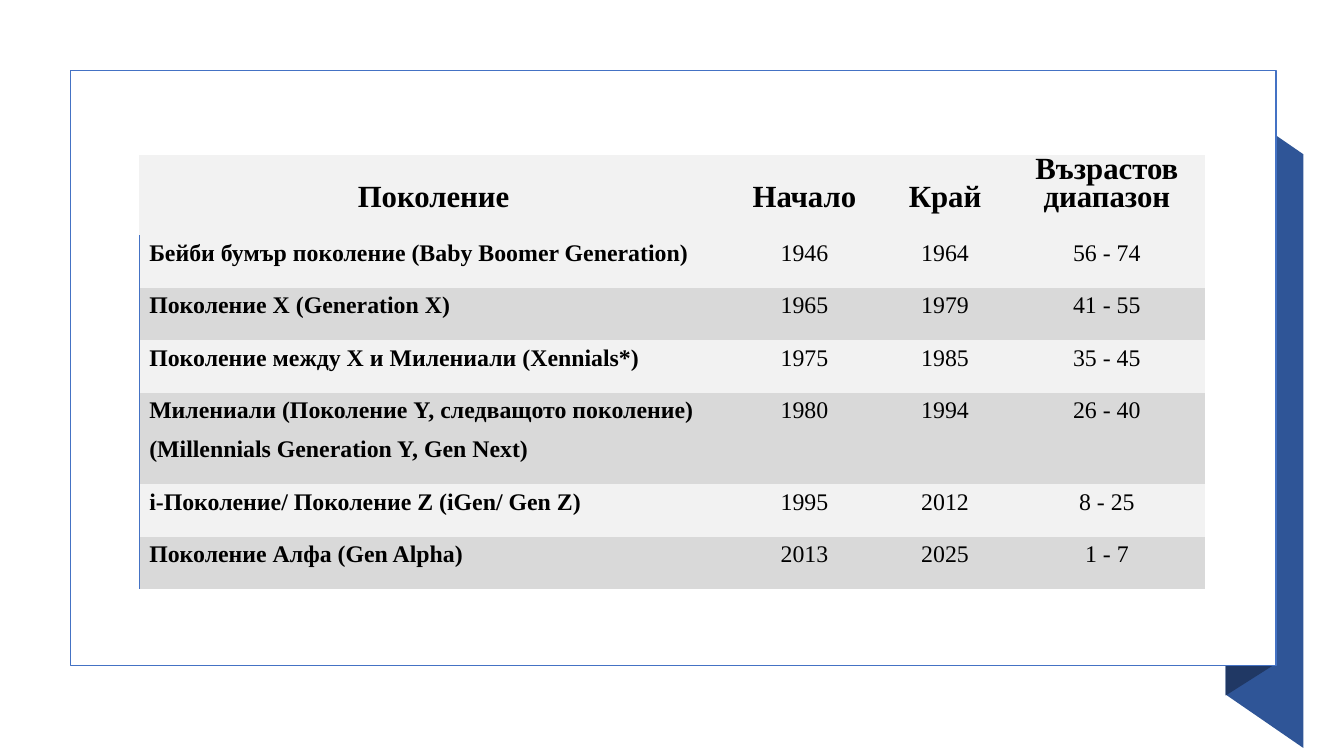
import dataclasses

import pptx
import pptx.dml.color
import pptx.enum.shapes
import pptx.enum.text
import pptx.oxml.ns
import pptx.util
from lxml import etree

Pt = pptx.util.Pt
ALIGN = pptx.enum.text.PP_ALIGN
ANCHOR = pptx.enum.text.MSO_ANCHOR


@dataclasses.dataclass(frozen=True)
class Theme:
    font: str = "Times New Roman"
    header_size: int = 22
    body_size: int = 17
    text: str = "000000"
    card: str = "FFFFFF"
    accent: str = "4472C4"
    ribbon: str = "2F5597"
    fold: str = "203864"
    light_row: str = "F2F2F2"
    dark_row: str = "D9D9D9"


THEME = Theme()
SLIDE_SIZE = (960, 540)
CARD_BOX = (50.4, 50.4, 861.1, 424.8)
TABLE_OFFSET = (49, 60.5)
COLUMN_WIDTHS = (417.6, 112.3, 88.6, 142.6)
HEADER_HEIGHT, ROW_HEIGHT, TALL_ROW_HEIGHT = 56.2, 37.5, 61.2

HEADERS = ("Поколение", "Начало", "Край", "Възрастов диапазон")
GENERATIONS = (
    ("Бейби бумър поколение (Baby Boomer Generation)", "1946", "1964", "56 - 74"),
    ("Поколение Х (Generation X)", "1965", "1979", "41 - 55"),
    ("Поколение между Х и Милениали (Xennials*)", "1975", "1985", "35 - 45"),
    ("Милениали (Поколение Y, следващото поколение)\n"
     "(Millennials Generation Y, Gen Next)", "1980", "1994", "26 - 40"),
    ("i-Поколение/ Поколение Z (iGen/ Gen Z)", "1995", "2012", "8 - 25"),
    ("Поколение Алфа (Gen Alpha)", "2013", "2025", "1 - 7"),
)


def color(value):
    return pptx.dml.color.RGBColor.from_string(value)


def paint(shape, fill, line=None):
    shape.shadow.inherit = False
    shape.fill.solid()
    shape.fill.fore_color.rgb = color(fill)
    if line:
        shape.line.color.rgb = color(line)
        shape.line.width = Pt(1)
    else:
        shape.line.fill.background()


def write_text(text_frame, text, *, size, bold=False, align=ALIGN.CENTER):
    """Write one paragraph for each line of the text."""
    text_frame.text = text
    for paragraph in text_frame.paragraphs:
        paragraph.alignment = align
        paragraph.line_spacing = Pt(20)
        paragraph.space_after = Pt(8)
        font = paragraph.runs[0].font
        font.name = THEME.font
        font.size = Pt(size)
        font.bold = bold
        font.color.rgb = color(THEME.text)


def set_borders(cell, left=None):
    """Clear the borders of a cell, except for a left one of the given colour."""
    properties = cell._tc.get_or_add_tcPr()
    qualified = pptx.oxml.ns.qn
    for side in ("lnL", "lnR", "lnT", "lnB"):
        border = etree.SubElement(properties, qualified(f"a:{side}"))
        if side == "lnL" and left:
            border.set("w", str(Pt(1)))
            fill = etree.SubElement(border, qualified("a:solidFill"))
            etree.SubElement(fill, qualified("a:srgbClr"), val=left)
        else:
            border.set("w", "0")
            etree.SubElement(border, qualified("a:noFill"))


def format_cell(cell, fill, anchor, left_border=None):
    set_borders(cell, left_border)
    cell.fill.solid()
    cell.fill.fore_color.rgb = color(fill)
    cell.vertical_anchor = anchor
    cell.margin_left, cell.margin_right = Pt(7.2), Pt(4.3)
    cell.margin_top, cell.margin_bottom = Pt(2.2), Pt(15.1)


def add_band(slide, left, top, width, height, slant, fill):
    """Add an upright band whose right side is lower than its left by slant."""
    right, bottom = left + width, top + height
    corners = [(left, top), (right, top + slant),
               (right, bottom + slant), (left, bottom)]
    points = [(Pt(x), Pt(y)) for x, y in corners]
    builder = slide.shapes.build_freeform(*points[0])
    builder.add_line_segments(points[1:], close=True)
    paint(builder.convert_to_shape(), fill)


def add_card(slide, left, top, width, height):
    """Add the framed card with the ribbon folded behind its right edge."""
    ribbon_left = left + width - 36
    ribbon_top = top + 21.6
    add_band(slide, ribbon_left, ribbon_top, 55.5, height - 0.7, 38.2, THEME.ribbon)
    add_band(slide, ribbon_left, ribbon_top, 33.1, height, -21, THEME.fold)
    card = slide.shapes.add_shape(
        pptx.enum.shapes.MSO_SHAPE.RECTANGLE,
        Pt(left), Pt(top), Pt(width), Pt(height))
    paint(card, THEME.card, THEME.accent)


def add_generation_table(slide, left, top):
    heights = [HEADER_HEIGHT] + [
        TALL_ROW_HEIGHT if "\n" in name else ROW_HEIGHT
        for name, *_ in GENERATIONS]
    table = slide.shapes.add_table(
        len(heights), len(COLUMN_WIDTHS), Pt(left), Pt(top),
        Pt(sum(COLUMN_WIDTHS)), Pt(sum(heights))).table
    for column, width in zip(table.columns, COLUMN_WIDTHS):
        column.width = Pt(width)
    for row, height in zip(table.rows, heights):
        row.height = Pt(height)

    for cell, text in zip(table.rows[0].cells, HEADERS):
        format_cell(cell, THEME.light_row, ANCHOR.BOTTOM)
        write_text(cell.text_frame, text, size=THEME.header_size, bold=True)
    for row_index, values in enumerate(GENERATIONS, start=1):
        fill = THEME.light_row if row_index % 2 else THEME.dark_row
        for column_index, text in enumerate(values):
            is_name = column_index == 0
            cell = table.cell(row_index, column_index)
            format_cell(cell, fill, ANCHOR.TOP, THEME.accent if is_name else None)
            write_text(cell.text_frame, text, size=THEME.body_size, bold=is_name,
                       align=ALIGN.JUSTIFY if is_name else ALIGN.CENTER)


def build_generations_slide(presentation):
    slide = presentation.slides.add_slide(presentation.slide_layouts[6])
    add_card(slide, *CARD_BOX)
    add_generation_table(slide, CARD_BOX[0] + TABLE_OFFSET[0],
                         CARD_BOX[1] + TABLE_OFFSET[1])


def main():
    presentation = pptx.Presentation()
    presentation.slide_width, presentation.slide_height = map(Pt, SLIDE_SIZE)
    build_generations_slide(presentation)
    presentation.save("out.pptx")


if __name__ == "__main__":
    main()
